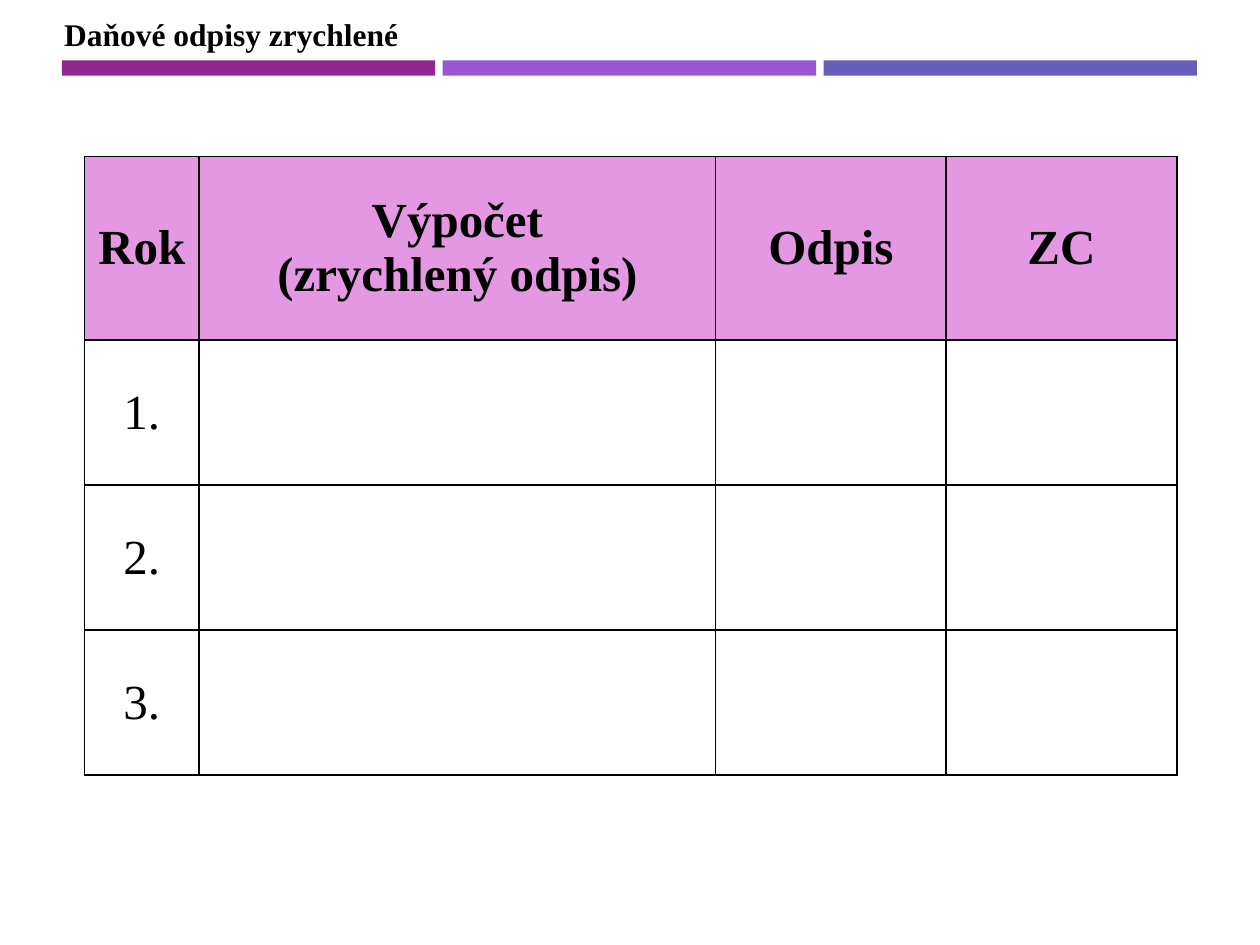
from lxml.etree import SubElement
from pptx import Presentation
from pptx.dml.color import RGBColor
from pptx.enum.shapes import MSO_SHAPE
from pptx.enum.text import MSO_ANCHOR, MSO_AUTO_SIZE, PP_ALIGN
from pptx.oxml.ns import qn
from pptx.util import Inches, Pt

COLORS = {
    "text": "000000",
    "border": "000000",
    "header": "E498E1",
    "bar_left": "92278F",
    "bar_middle": "9B57D3",
    "bar_right": "665EB8",
}
FONT = "Times New Roman"
HEADERS = ["Rok", "Výpočet\n(zrychlený odpis)", "Odpis", "ZC"]
YEARS = ["1.", "2.", "3."]
COLUMN_WIDTHS = [0.91, 4.1, 1.83, 1.83]
ROW_HEIGHTS = [1.46, 1.15, 1.15, 1.15]


def color(name):
    return RGBColor.from_string(COLORS[name])


def set_attributes(target, values):
    for name, value in values.items():
        setattr(target, name, value)


def format_font(font, size, bold):
    set_attributes(font, {"name": FONT, "size": Pt(size), "bold": bold})
    font.color.rgb = color("text")


def add_title(page, box, text):
    title = page.shapes.title
    sides = ("left", "top", "width", "height")
    set_attributes(title, dict(zip(sides, map(Inches, box))))
    frame = title.text_frame
    frame.text = text
    set_attributes(frame, {
        "word_wrap": False,
        "auto_size": MSO_AUTO_SIZE.SHAPE_TO_FIT_TEXT,
        "vertical_anchor": MSO_ANCHOR.TOP,
    })
    para = frame.paragraphs[0]
    para.alignment = PP_ALIGN.LEFT
    format_font(para.runs[0].font, 18, True)


def add_bars(page, box, names, gap=0.06):
    left, top, width, height = box
    bar_width = (width - gap * (len(names) - 1)) / len(names)
    for index, name in enumerate(names):
        bar = page.shapes.add_shape(
            MSO_SHAPE.RECTANGLE,
            Inches(left + index * (bar_width + gap)), Inches(top),
            Inches(bar_width), Inches(height))
        bar.shadow.inherit = False
        bar.fill.solid()
        bar.fill.fore_color.rgb = color(name)
        bar.line.fill.background()


def add_borders(cell):
    properties = cell._tc.get_or_add_tcPr()
    for side in ("a:lnL", "a:lnR", "a:lnT", "a:lnB"):
        line = SubElement(properties, qn(side), w=str(Pt(1)))
        fill = SubElement(line, qn("a:solidFill"))
        SubElement(fill, qn("a:srgbClr"), val=COLORS["border"])


def format_cell(cell, text, is_header):
    set_attributes(cell, {
        "margin_left": Inches(0.07), "margin_right": Inches(0.07),
        "margin_top": 0, "margin_bottom": 0,
        "vertical_anchor": MSO_ANCHOR.MIDDLE,
    })
    add_borders(cell)
    if is_header:
        cell.fill.solid()
        cell.fill.fore_color.rgb = color("header")
    else:
        cell.fill.background()
    cell.text_frame.text = text
    for para in cell.text_frame.paragraphs:
        para.alignment = PP_ALIGN.CENTER
        for span in para.runs:
            format_font(span.font, 28, is_header)


def add_depreciation_table(page, box):
    rows = [HEADERS] + [[year, "", "", ""] for year in YEARS]
    table = page.shapes.add_table(
        len(rows), len(HEADERS), *map(Inches, box)).table
    set_attributes(table, {"first_row": False, "horz_banding": False})
    for column, width in zip(table.columns, COLUMN_WIDTHS):
        column.width = Inches(width)
    for row, height in zip(table.rows, ROW_HEIGHTS):
        row.height = Inches(height)
    for row_index, texts in enumerate(rows):
        for column_index, text in enumerate(texts):
            format_cell(table.cell(row_index, column_index), text, row_index == 0)


def main():
    deck = Presentation()
    set_attributes(deck, {"slide_width": Inches(10), "slide_height": Inches(7.5)})
    page = deck.slides.add_slide(deck.slide_layouts[5])

    # Colour bars under the heading
    add_bars(page, (0.49, 0.48, 9.01, 0.12), ["bar_left", "bar_middle", "bar_right"])
    # Heading
    add_title(page, (0.41, 0.07, 2.88, 0.4), "Daňové odpisy zrychlené")
    # Depreciation by year
    add_depreciation_table(page, (0.67, 1.24, sum(COLUMN_WIDTHS), sum(ROW_HEIGHTS)))

    deck.save("out.pptx")


if __name__ == "__main__":
    main()
